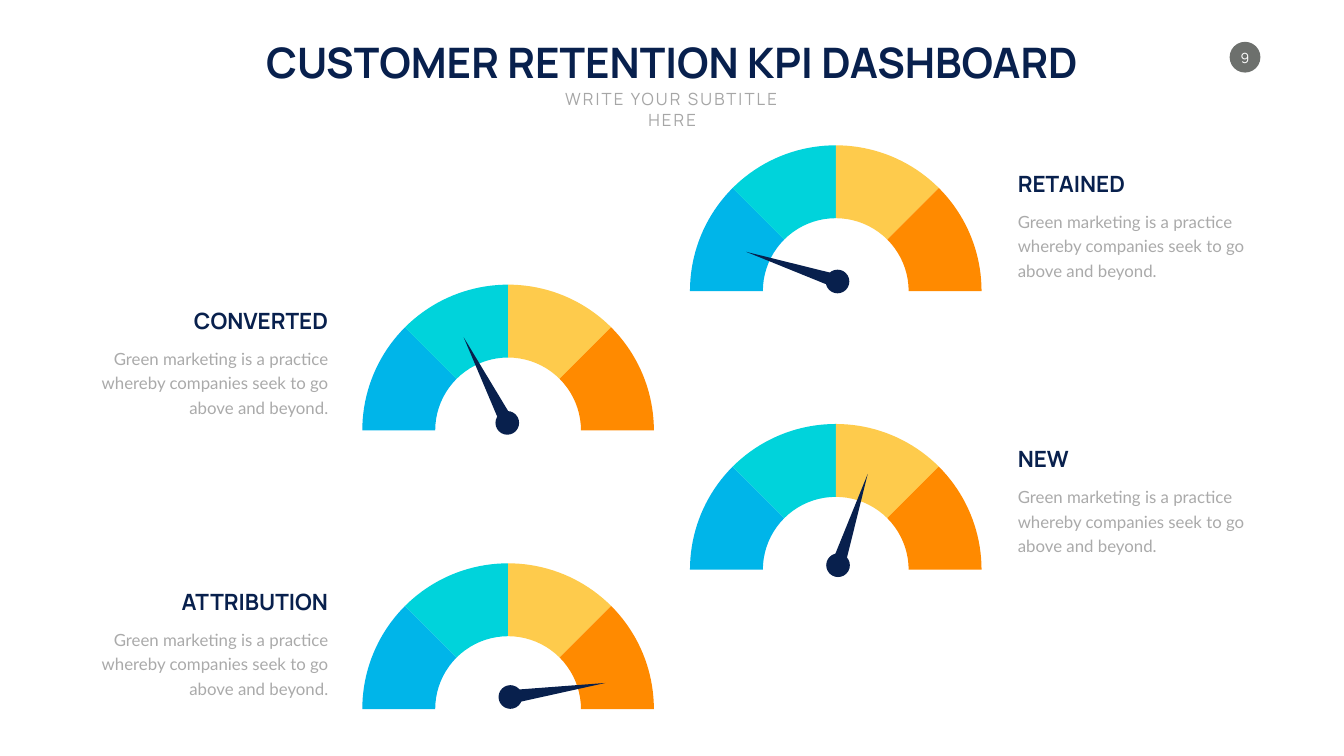
import math
from dataclasses import dataclass

import pptx
import pptx.chart.data
import pptx.dml.color
import pptx.enum.chart
import pptx.enum.shapes
import pptx.enum.text
import pptx.util

RGBColor = pptx.dml.color.RGBColor
Align = pptx.enum.text.PP_ALIGN
Anchor = pptx.enum.text.MSO_ANCHOR
Shape = pptx.enum.shapes.MSO_SHAPE
Pt = pptx.util.Pt

NAVY = RGBColor(0x08, 0x20, 0x4D)
BLUE = RGBColor(0x00, 0xB5, 0xE9)
TEAL = RGBColor(0x00, 0xD3, 0xDB)
GOLD = RGBColor(0xFE, 0xCB, 0x4C)
ORANGE = RGBColor(0xFF, 0x8A, 0x00)
GREY = RGBColor(0xAA, 0xAA, 0xAA)
SILVER = RGBColor(0xA6, 0xA6, 0xA6)
SLATE = RGBColor(0x6D, 0x70, 0x6D)
WHITE = RGBColor(0xFF, 0xFF, 0xFF)

WIDE = pptx.util.Inches(26.66)
HIGH = pptx.util.Inches(15)

# All lengths below are percent of the slide's width or height.
DIAL_W, DIAL_H = 22.73, 41.67
DIAL_X, DIAL_Y = 26.44, 17.67
COL, ROW = 24.38, 18.43
HUB_W, HUB_H = 1.76, 3.13
PIN_W, PIN_H = 1.01, 12.6
REACH = 6.4  # hub centre to needle centre, share of height
TEXT_W, HEAD_H, BODY_H = 18.38, 4.27, 10.13
LEFT_X, RIGHT_X = 6.41, 75.36
BODY = "Green marketing is a practice whereby companies seek to go above and beyond."


@dataclass(frozen=True)
class Box:
    left: float
    top: float
    width: float
    height: float

    def emu(self) -> tuple[int, int, int, int]:
        return (round(self.left * WIDE / 100), round(self.top * HIGH / 100),
                round(self.width * WIDE / 100), round(self.height * HIGH / 100))


@dataclass(frozen=True)
class Style:
    size: float
    color: RGBColor
    font: str = "Manrope"
    bold: bool = False
    track: int = 0  # hundredths of a point


@dataclass(frozen=True)
class Gauge:
    name: str
    col: int
    row: int
    angle: float  # clockwise from upright
    hub_dx: float
    hub_dy: float
    drop: float  # heading below the dial's top
    head_w: float


TITLE = Style(60, NAVY, bold=True)
SUB = Style(24, SILVER, track=300)
PAGE = Style(20, WHITE)
HEAD = Style(32, NAVY, bold=True)
NOTE = Style(24, GREY, "Lato")

GAUGES = [
    Gauge("CONVERTED", 0, 1, 333, -0.06, -1.0, 4.07, 10.99),
    Gauge("ATTRIBUTION", 0, 3, 81.6, 0.17, -1.6, 4.4, 11.97),
    Gauge("RETAINED", 1, 0, 288, 0.13, -1.27, 4.4, 8.89),
    Gauge("NEW", 1, 2, 18, 0.17, -0.6, 4.0, 4.69),
]


def add_text(slide, box: Box, text: str, style: Style, align=Align.CENTER,
             anchor=Anchor.TOP, wrap: bool = False):
    """Add a one-run text box and return its shape."""
    shape = slide.shapes.add_textbox(*box.emu())
    frame = shape.text_frame
    frame.word_wrap = wrap
    frame.auto_size = pptx.enum.text.MSO_AUTO_SIZE.SHAPE_TO_FIT_TEXT
    frame.vertical_anchor = anchor
    para = frame.paragraphs[0]
    para.alignment = align
    run = para.add_run()
    run.text = text
    run.font.name = style.font
    run.font.size = Pt(style.size)
    run.font.bold = style.bold
    run.font.color.rgb = style.color
    if style.track:
        run.font._element.set("spc", str(style.track))
    return shape


def add_solid(shapes, kind, box: Box, color: RGBColor, turn: float = 0) -> None:
    shape = shapes.add_shape(kind, *box.emu())
    shape.shadow.inherit = False
    shape.fill.solid()
    shape.fill.fore_color.rgb = color
    shape.line.fill.background()
    shape.rotation = turn


def add_dial(slide, box: Box) -> None:
    """Add a doughnut whose lower four slices are clear."""
    data = pptx.chart.data.CategoryChartData()
    data.categories = [str(num) for num in range(1, 9)]
    data.add_series("Series 1", [12] * 8)
    kind = pptx.enum.chart.XL_CHART_TYPE.DOUGHNUT
    chart = slide.shapes.add_chart(kind, *box.emu(), data).chart
    chart.has_legend = False
    chart.has_title = False
    chart.font.name = "Lato"
    chart.font.size = Pt(20)
    chart.font.color.rgb = GREY
    plot = chart.plots[0]
    plot.vary_by_categories = True
    plot._element.find(pptx.oxml.ns.qn("c:firstSliceAng")).set("val", "270")
    for num, color in enumerate([BLUE, TEAL, GOLD, ORANGE] + [None] * 4):
        part = plot.series[0].points[num].format
        part.line.fill.background()
        if color is None:
            part.fill.background()
        else:
            part.fill.solid()
            part.fill.fore_color.rgb = color


def add_needle(slide, mid_x: float, mid_y: float, angle: float) -> None:
    turn = math.radians(angle)
    pin_x = mid_x + REACH * math.sin(turn) * HIGH / WIDE
    pin_y = mid_y - REACH * math.cos(turn)
    group = slide.shapes.add_group_shape().shapes
    pin = Box(pin_x - PIN_W / 2, pin_y - PIN_H / 2, PIN_W, PIN_H)
    hub = Box(mid_x - HUB_W / 2, mid_y - HUB_H / 2, HUB_W, HUB_H)
    add_solid(group, Shape.ISOSCELES_TRIANGLE, pin, NAVY, angle)
    add_solid(group, Shape.OVAL, hub, NAVY)


def add_label(slide, gauge: Gauge, top: float) -> None:
    """Add heading and note on the dial's outer side."""
    if gauge.col == 0:
        left, align = LEFT_X, Align.RIGHT
        head_x = LEFT_X + TEXT_W - gauge.head_w
    else:
        left, align, head_x = RIGHT_X, Align.LEFT, RIGHT_X
    add_text(slide, Box(head_x, top, gauge.head_w, HEAD_H), gauge.name, HEAD,
             align, Anchor.BOTTOM)
    note = add_text(slide, Box(left, top + 5, TEXT_W, BODY_H), BODY, NOTE,
                    align, wrap=True)
    para = note.text_frame.paragraphs[0]
    para.line_spacing = Pt(35)
    para.space_before = Pt(4.8)


def add_gauge(slide, gauge: Gauge) -> None:
    dial = Box(DIAL_X + gauge.col * COL, DIAL_Y + gauge.row * ROW, DIAL_W, DIAL_H)
    add_dial(slide, dial)
    add_needle(slide, dial.left + DIAL_W / 2 + gauge.hub_dx,
               dial.top + DIAL_H / 2 + gauge.hub_dy, gauge.angle)
    add_label(slide, gauge, dial.top + gauge.drop)


def add_badge(slide) -> None:
    add_solid(slide.shapes, Shape.OVAL, Box(91.49, 5.53, 2.29, 4.07), SLATE)
    page = add_text(slide, Box(91.86, 6.47, 1.54, 2.27), "9", PAGE,
                    anchor=Anchor.MIDDLE)
    frame = page.text_frame
    frame.margin_left = frame.margin_right = 0
    frame.margin_top = frame.margin_bottom = 0


def main() -> None:
    deck = pptx.Presentation()
    deck.slide_width, deck.slide_height = WIDE, HIGH
    slide = deck.slides.add_slide(deck.slide_layouts[6])
    add_badge(slide)
    add_text(slide, Box(18.53, 4.47, 62.94, 7.4),
             "CUSTOMER RETENTION KPI DASHBOARD", TITLE)
    add_text(slide, Box(39.83, 11.47, 20.37, 3.33),
             "WRITE YOUR SUBTITLE HERE", SUB, wrap=True)
    for gauge in GAUGES:
        add_gauge(slide, gauge)
    deck.save("out.pptx")


if __name__ == "__main__":
    main()
